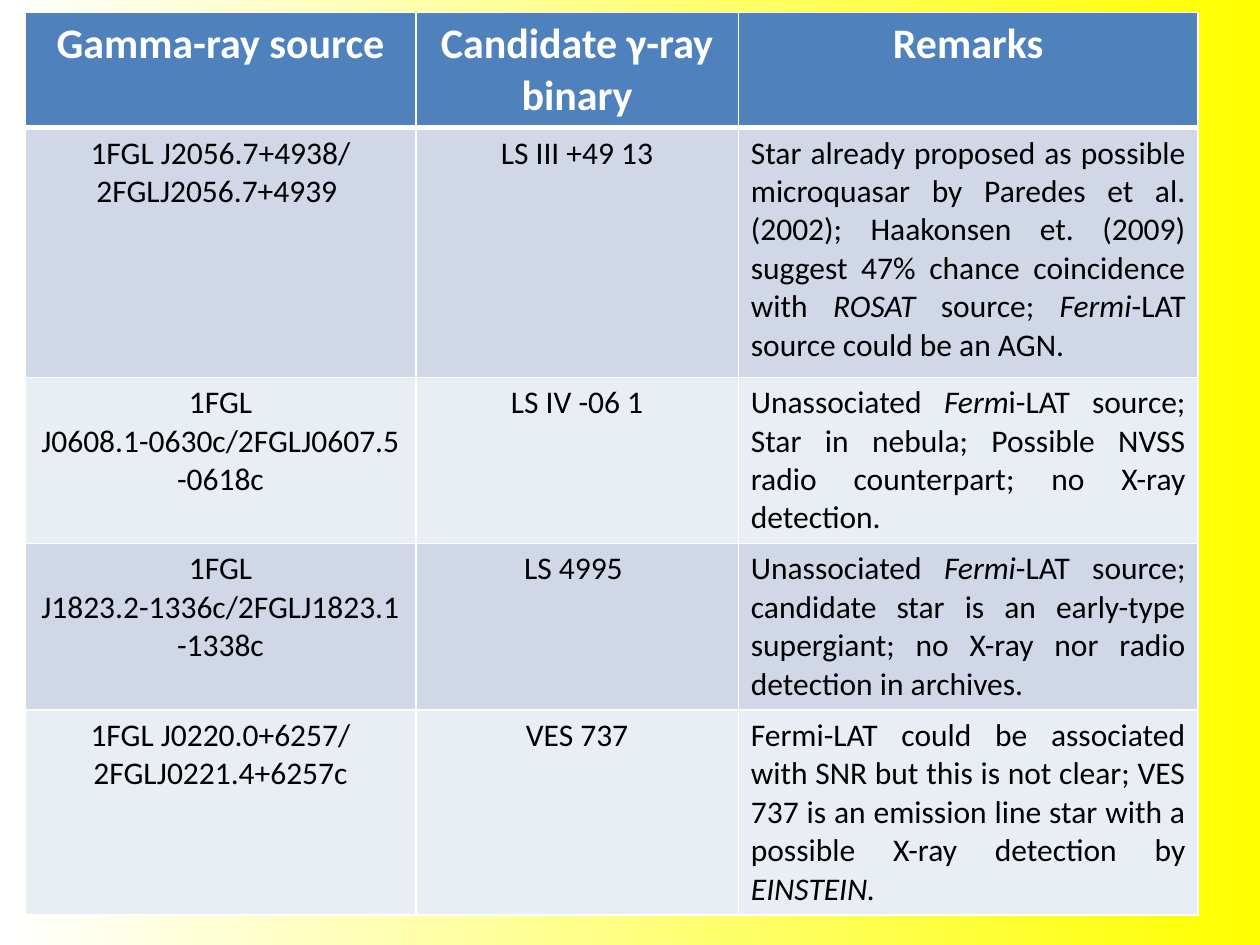
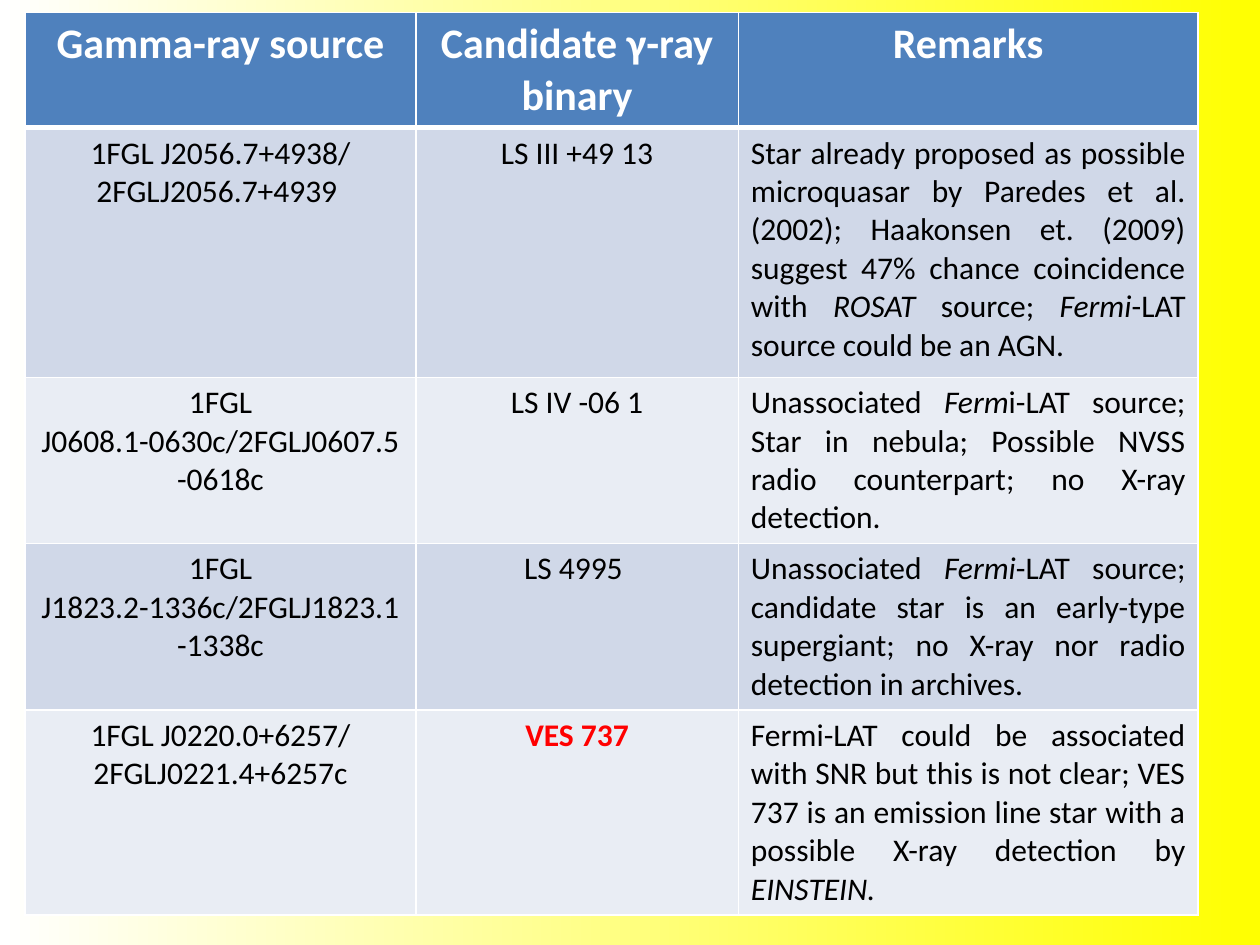
from lxml.etree import SubElement
from pptx import Presentation
from pptx.dml.color import RGBColor
from pptx.enum.text import PP_ALIGN
from pptx.oxml.ns import qn
from pptx.util import Pt

HEAD = ["Gamma-ray source", "Candidate γ-ray binary", "Remarks"]
ROWS = [
    ["1FGL J2056.7+4938/\n2FGLJ2056.7+4939 ", "LS III +49 13",
     "Star already proposed as possible microquasar by Paredes et al. (2002); "
     "Haakonsen et. (2009) suggest 47% chance coincidence with *ROSAT *source; "
     "*Fermi*-LAT source could be an AGN."],
    ["1FGL J0608.1-0630c/2FGLJ0607.5-0618c", "LS IV -06 1",
     "Unassociated *Ferm*i-LAT source; Star in nebula; Possible NVSS radio "
     "counterpart; no X-ray detection."],
    ["1FGL J1823.2-1336c/2FGLJ1823.1-1338c", "LS 4995 ",
     "Unassociated *Fermi*-LAT source; candidate star is an early-type "
     "supergiant; no X-ray nor radio detection in archives."],
    ["1FGL J0220.0+6257/\n2FGLJ0221.4+6257c", "VES 737",
     "Fermi-LAT could be associated with SNR but this is not clear; VES 737 is "
     "an emission line star with a possible X-ray detection by *EINSTEIN.*"],
]
MARKS = [None, "VES 737"]
WIDE = [223.2, 184.3, 262.8]
HIGH = [51.1, 142.6, 95, 95, 73.4]
LEFT, TOP, TALL = 14.4, 7.2, 513.4
FONT = "Calibri"
BLUE, BANDS = "4F81BD", ["D0D8E8", "E9EDF4"]
WHITE, BLACK, RED, YELLOW = "FFFFFF", "000000", "FF0000", "FFFF00"


def tint(text):
    return RGBColor.from_string(text)


def back(slide):
    fill = slide.background.fill
    fill.gradient()
    fill.gradient_angle = 180
    for stop, hue in zip(fill.gradient_stops, [YELLOW, WHITE]):
        stop.color.rgb = tint(hue)
    first = next(slide.element.iter(qn("a:srgbClr")))
    SubElement(first, qn("a:alpha"), val="37000")


def edge(cell, head):
    props = cell._tc.get_or_add_tcPr()
    sides = ["lnL", "lnR", "lnT", "lnB"]
    for spot, side in enumerate(sides):
        width = 3 if head and side == "lnB" else 1
        line = props.makeelement(qn("a:" + side), {"w": str(Pt(width))})
        props.insert(spot, line)
        fill = SubElement(line, qn("a:solidFill"))
        SubElement(fill, qn("a:srgbClr"), val=WHITE)


def write(cell, text, size, hue, bold, align):
    frame = cell.text_frame
    for num, part in enumerate(text.split("\n")):
        para = frame.add_paragraph() if num else frame.paragraphs[0]
        para.alignment = align
        font = para.font
        font.name, font.size, font.bold = FONT, Pt(size), bold
        font.color.rgb = tint(hue)
        for odd, piece in enumerate(part.split("*")):
            if piece:
                run = para.add_run()
                run.text = piece
                if odd % 2:
                    run.font.italic = True


def grid(slide, mark):
    data = [HEAD] + ROWS
    shape = slide.shapes.add_table(len(data), len(HEAD), Pt(LEFT), Pt(TOP),
                                   Pt(sum(WIDE)), Pt(TALL))
    table = shape.table
    for col, width in zip(table.columns, WIDE):
        col.width = Pt(width)
    for row, height in zip(table.rows, HIGH):
        row.height = Pt(height)
    shape.height = Pt(TALL)
    for r, line in enumerate(data):
        for c, text in enumerate(line):
            cell = table.cell(r, c)
            head, hot = r == 0, text == mark
            cell.fill.solid()
            cell.fill.fore_color.rgb = tint(BLUE if head else BANDS[(r - 1) % 2])
            edge(cell, head)
            hue = WHITE if head else RED if hot else BLACK
            align = PP_ALIGN.JUSTIFY if r and c == 2 else PP_ALIGN.CENTER
            write(cell, text, 24 if head else 18, hue, head or hot, align)


def main():
    deck = Presentation()
    deck.slide_width, deck.slide_height = Pt(720), Pt(540)
    for mark in MARKS:
        slide = deck.slides.add_slide(deck.slide_layouts[6])
        back(slide)
        grid(slide, mark)
    deck.save("out.pptx")


if __name__ == "__main__":
    main()
